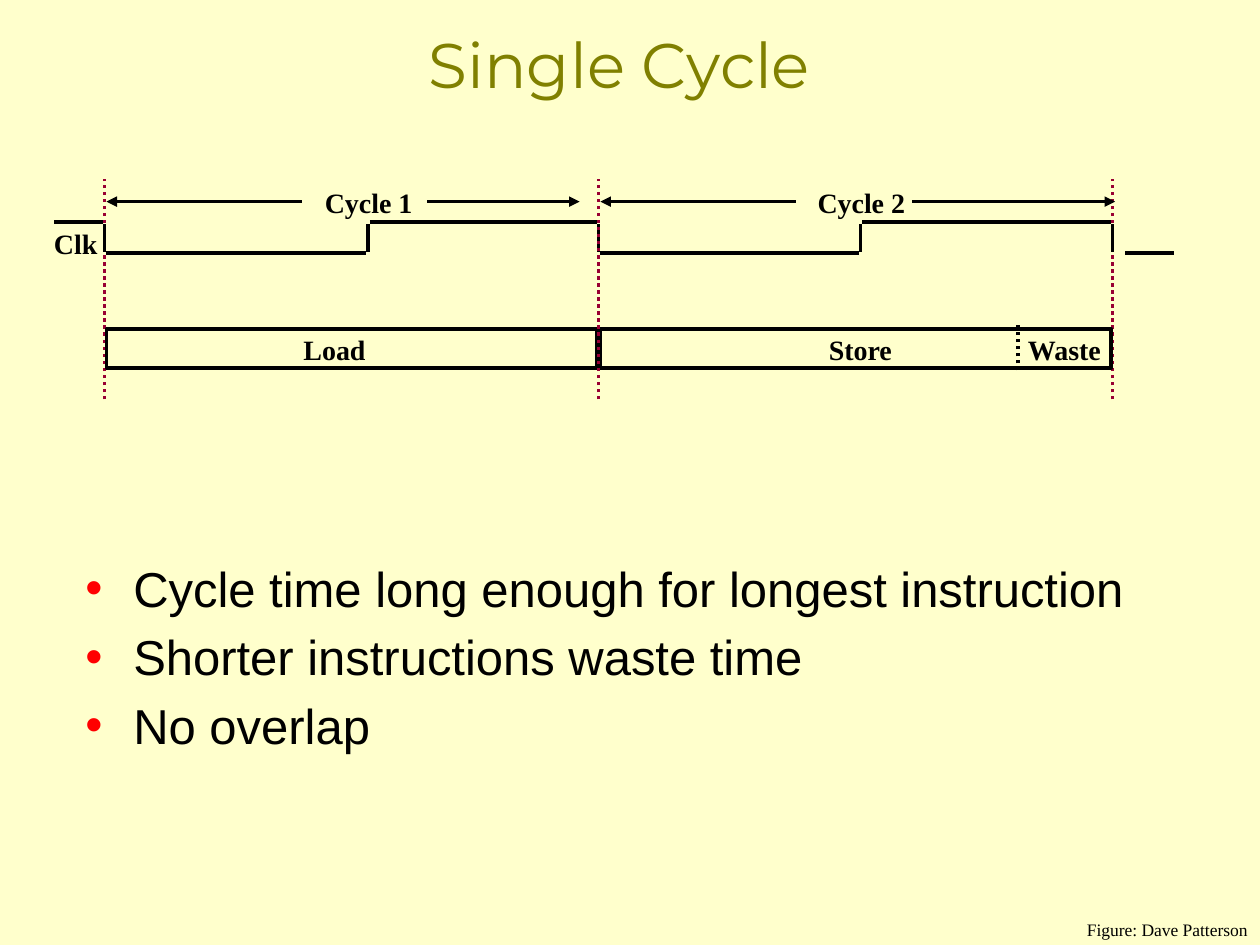
"""Build the single cycle timing slide on a grid of 100 columns by 75 rows."""
from lxml.etree import SubElement as Sub
from pptx import Presentation
from pptx.dml.color import RGBColor
from pptx.enum.dml import MSO_LINE as Dash
from pptx.enum.shapes import MSO_CONNECTOR as Link, MSO_SHAPE as Kind
from pptx.enum.text import MSO_AUTO_SIZE as Fit, PP_ALIGN as Align
from pptx.oxml.ns import qn
from pptx.util import Inches, Pt

BLACK = RGBColor(0x00, 0x00, 0x00)
WINE = RGBColor(0x99, 0x00, 0x33)
OLIVE = RGBColor(0x80, 0x80, 0x00)
CREAM = RGBColor(0xFF, 0xFF, 0xCC)
SERIF = "Times New Roman"

deck = Presentation()
deck.slide_width, deck.slide_height = Inches(10), Inches(7.5)
cell = deck.slide_width / 100
slide = deck.slides.add_slide(deck.slide_layouts[6])
slide.background.fill.solid()
slide.background.fill.fore_color.rgb = CREAM
shapes = slide.shapes


def rule(x1, y1, x2, y2, color=BLACK, dots=False, arrow=False):
    ends = [round(n * cell) for n in (x1, y1, x2, y2)]
    link = shapes.add_connector(Link.STRAIGHT, *ends)
    link.line.color.rgb = color
    link.line.width = Pt(2)
    props = link._element.spPr
    if dots:
        link.line.dash_style = Dash.ROUND_DOT
    if arrow:
        Sub(props.find(qn("a:ln")), qn("a:headEnd"), type="triangle")
    Sub(props, qn("a:effectLst"))


def label(lines, x, y, w, h, size=16, font=SERIF, color=BLACK, bold=False,
          wrap=False, align=Align.LEFT):
    box = shapes.add_textbox(*[round(n * cell) for n in (x, y, w, h)])
    frame = box.text_frame
    frame.text = "\n".join(lines)
    frame.word_wrap = wrap
    frame.auto_size = Fit.NONE if wrap else Fit.SHAPE_TO_FIT_TEXT
    for para in frame.paragraphs:
        para.alignment = align
        para.font.size, para.font.name = Pt(size), font
        para.font.bold, para.font.color.rgb = bold, color
    return frame


title = label(["Single Cycle"], 5.8, 1.7, 86.7, 7.6, 36, "Montserrat", OLIVE,
              wrap=True, align=Align.CENTER)
title.margin_left = title.margin_right = Inches(0.07)
title.margin_top = title.margin_bottom = Inches(0.03)

edges = [8.3, 47.5, 88.3]
high, low = 17.6, 20.1
for x in (edges[0], edges[2]):
    rule(x, 31.7, x, 14.2, WINE, dots=True)
for x in edges:
    rule(x, 17.8, x, 20)
rule(4.3, high, 8.2, high)
rule(89.3, low, 93.2, low)
label(["Clk"], 3.3, 17.5, 6, 3.6, bold=True)

spans = [(29.2, 46, "Cycle 1", 24.8, "Load", 23.1, 6.9),
         (68.3, 88.5, "Cycle 2", 63.9, "Store", 64.8, 7)]
for left, right, span in zip(edges, edges[1:], spans):
    mid, tip, name, near, task, start, wide = span
    left, right = left + 0.15, right - 0.1
    rule(left, low, mid - 0.15, low)
    rule(mid, 17.8, mid, 20)
    rule(mid + 0.15, high, right, high)
    bar = shapes.add_shape(Kind.RECTANGLE, *[round(n * cell) for n in
                           (left, 26.1, right - left, 3.1)])
    bar.shadow.inherit = False
    bar.fill.background()
    bar.line.color.rgb = BLACK
    bar.line.width = Pt(2)
    label([task], start, 25.9, wide, 3.6, bold=True)
    label([name], near, 14.2, 9, 3.6, bold=True)
    rule(left, 16, left + 15.55, 16, arrow=True)
    rule(tip, 16, near + 9.1 if tip < 50 else 72.4, 16, arrow=True)

rule(80.8, 29.4, 80.8, 25.8, dots=True)
label(["Waste"], 80.6, 25.9, 7.9, 3.6, bold=True)
rule(edges[1], 31.7, edges[1], 14.2, WINE, dots=True)

note = label(["Figure: Dave Patterson"], 85.2, 73.3, 14.8, 1.7, 10,
             align=Align.RIGHT)
note.paragraphs[0].line_spacing = 0.4

points = ["Cycle time long enough for longest instruction",
          "Shorter instructions waste time", "No overlap"]
body = label(points, 5.8, 43.8, 86.7, 27.9, 28, "Arial", wrap=True)
for para in body.paragraphs:
    para.space_before = Pt(5.6)
    props = para._p.get_or_add_pPr()
    props.set("marL", str(Inches(0.38)))
    props.set("indent", str(-Inches(0.38)))
    tint = Sub(props, qn("a:buClr"))
    Sub(tint, qn("a:srgbClr"), val="FF0000")
    Sub(props, qn("a:buFont"), typeface="Arial")
    Sub(props, qn("a:buChar"), char="•")
    props.append(props.find(qn("a:defRPr")))

deck.save("out.pptx")
